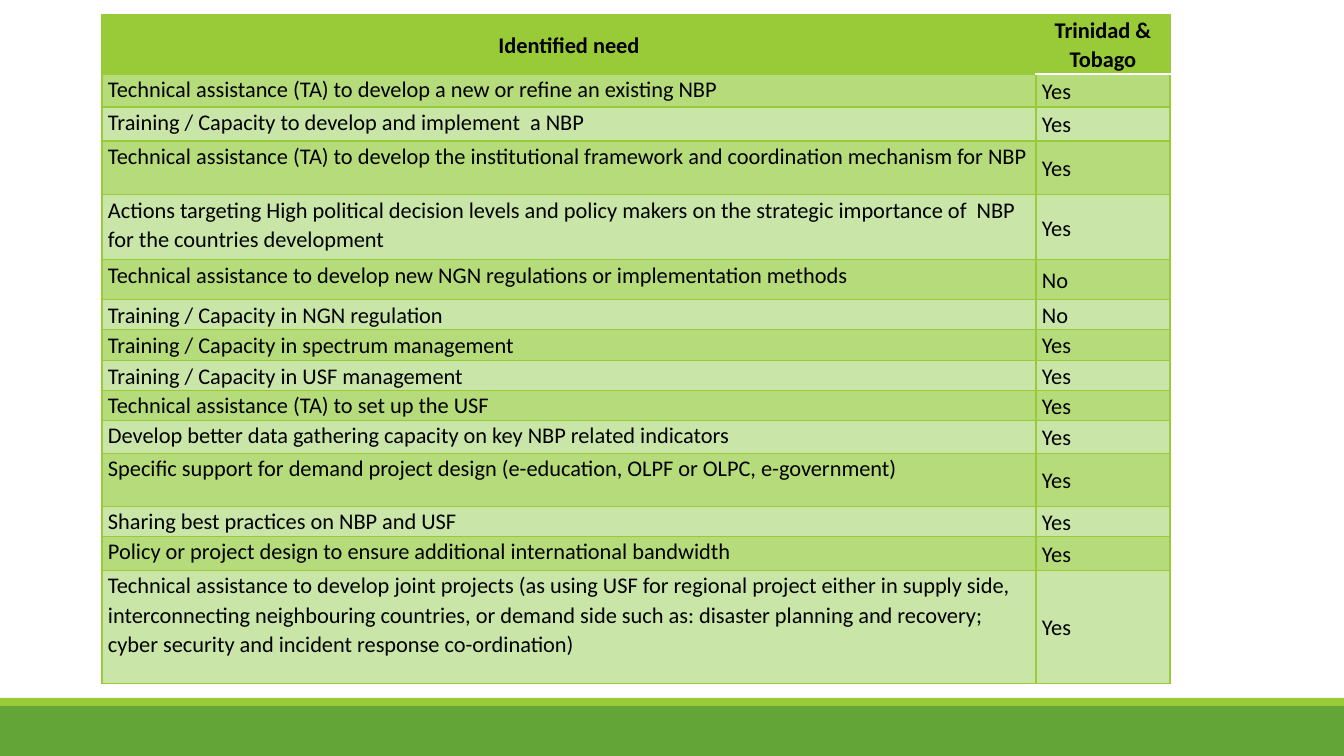
from typing import NamedTuple

from lxml import etree
from pptx import Presentation
from pptx.dml.color import RGBColor
from pptx.enum.shapes import MSO_SHAPE
from pptx.enum.text import MSO_ANCHOR, PP_ALIGN
from pptx.oxml.ns import qn
from pptx.util import Emu, Pt

RECT = MSO_SHAPE.RECTANGLE
TOP, MIDDLE = MSO_ANCHOR.TOP, MSO_ANCHOR.MIDDLE
LEFT, CENTER = PP_ALIGN.LEFT, PP_ALIGN.CENTER

LIME, GREEN, WHITE, BLACK = "99CB38", "63A537", "FFFFFF", "000000"
BANDS = ("B6DB7B", "C9E6A8")


class Bar(NamedTuple):
    top: int
    height: int
    fill: str


class Need(NamedTuple):
    height: int
    text: str
    answer: str


BARS = [Bar(706, 50, GREEN), Bar(698, 8, LIME)]
HEAD = Need(59, "Identified need", "Trinidad & Tobago")
NEEDS = [
    Need(33, "Technical assistance (TA) to develop a new or refine an existing NBP", "Yes"),
    Need(34, "Training / Capacity to develop and implement  a NBP", "Yes"),
    Need(54, "Technical assistance (TA) to develop the institutional framework "
         "and coordination mechanism for NBP", "Yes"),
    Need(65, "Actions targeting High political decision levels and policy makers "
         "on the strategic importance of  NBP for the countries development", "Yes"),
    Need(40, "Technical assistance to develop new NGN regulations "
         "or implementation methods", "No"),
    Need(30, "Training / Capacity in NGN regulation", "No"),
    Need(31, "Training / Capacity in spectrum management", "Yes"),
    Need(30, "Training / Capacity in USF management", "Yes"),
    Need(30, "Technical assistance (TA) to set up the USF", "Yes"),
    Need(33, "Develop better data gathering capacity on key NBP related indicators", "Yes"),
    Need(53, "Specific support for demand project design "
         "(e-education, OLPF or OLPC, e-government)", "Yes"),
    Need(30, "Sharing best practices on NBP and USF", "Yes"),
    Need(34, "Policy or project design to ensure additional international bandwidth", "Yes"),
    Need(113, "Technical assistance to develop joint projects (as using USF for "
         "regional project either in supply side, interconnecting neighbouring "
         "countries, or demand side such as: disaster planning and recovery; "
         "cyber security and incident response co-ordination)", "Yes"),
]
WIDTHS = (934, 134)


def px(count: int) -> Emu:
    return Emu(round(count * 914400 / 100.8))


def paint(fill, color: str) -> None:
    fill.solid()
    fill.fore_color.rgb = RGBColor.from_string(color)


def draw_bar(slide, bar: Bar) -> None:
    shape = slide.shapes.add_shape(RECT, 0, px(bar.top), px(1344), px(bar.height))
    shape.shadow.inherit = False
    shape.line.fill.background()
    paint(shape.fill, bar.fill)


def set_edges(cell, top: str, bottom: str) -> None:
    props = cell._tc.get_or_add_tcPr()
    edges = (("L", LIME), ("R", LIME), ("T", top), ("B", bottom))
    for place, (side, color) in enumerate(edges):
        width = 1 if color == LIME else 1.25
        line = etree.Element(qn(f"a:ln{side}"), w=str(Pt(width)))
        solid = etree.SubElement(line, qn("a:solidFill"))
        etree.SubElement(solid, qn("a:srgbClr"), val=color)
        props.insert(place, line)


def fill_cell(cell, text: str, fill: str, head: bool, anchor) -> None:
    cell.margin_left = cell.margin_right = px(6)
    cell.margin_top = cell.margin_bottom = 0
    cell.vertical_anchor = anchor
    paint(cell.fill, fill)
    cell.text = text
    para = cell.text_frame.paragraphs[0]
    para.alignment = CENTER if head else LEFT
    para.line_spacing = 1.07
    para.space_after = Pt(8)
    para.font.name = "Calibri"
    para.font.size = Pt(16)
    para.font.bold = head
    para.font.color.rgb = RGBColor.from_string(BLACK)


def draw_table(slide) -> None:
    rows = [HEAD, *NEEDS]
    total = sum(row.height for row in rows)
    table = slide.shapes.add_table(len(rows), len(WIDTHS), px(102), px(15),
                                   px(sum(WIDTHS)), px(total)).table
    table.horz_banding = False
    for col, width in zip(table.columns, WIDTHS):
        col.width = px(width)
    for index, row in enumerate(rows):
        table.rows[index].height = px(row.height)
        head = index == 0
        fill = LIME if head else BANDS[(index - 1) % 2]
        for side, text in enumerate((row.text, row.answer)):
            cell = table.cell(index, side)
            anchor = MIDDLE if head or side == 1 else TOP
            fill_cell(cell, text, fill, head, anchor)
            # White rule under the country heading only
            set_edges(cell, top=WHITE if (index, side) == (1, 1) else LIME,
                      bottom=WHITE if (index, side) == (0, 1) else LIME)


def main() -> None:
    deck = Presentation()
    deck.slide_width, deck.slide_height = px(1344), px(756)
    slide = deck.slides.add_slide(deck.slide_layouts[6])
    # Footer bars
    for bar in BARS:
        draw_bar(slide, bar)
    # Table of needs
    draw_table(slide)
    deck.save("out.pptx")


if __name__ == "__main__":
    main()
